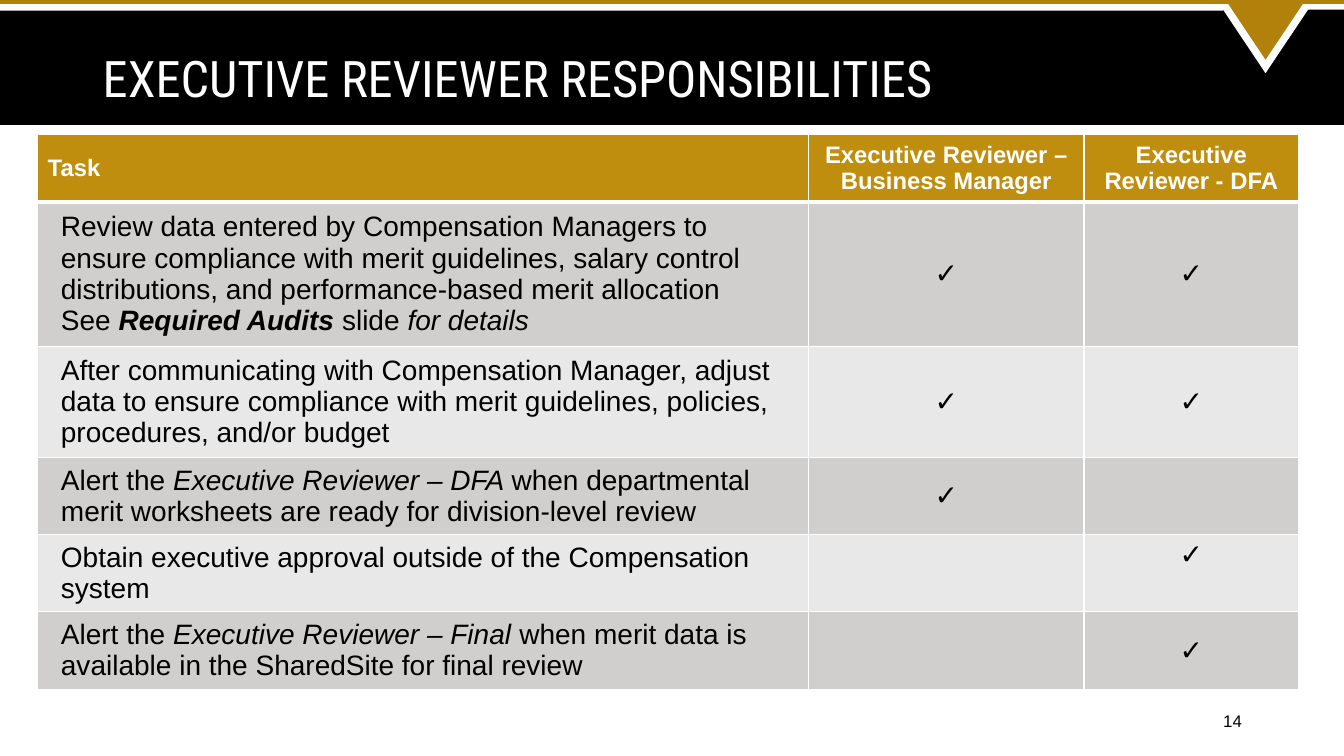
from dataclasses import dataclass

from lxml.etree import SubElement
from pptx import Presentation
from pptx.dml.color import RGBColor
from pptx.enum.shapes import MSO_SHAPE
from pptx.enum.text import MSO_ANCHOR, MSO_AUTO_SIZE, PP_ALIGN
from pptx.oxml.ns import qn
from pptx.util import Pt

COLORS = {
    "black": "000000",
    "white": "FFFFFF",
    "gold": "B1810B",
    "header": "C08E0E",
    "dark_row": "D0CFCE",
    "light_row": "E9E8E8",
}
CHECK = "✓"


@dataclass
class Band:
    shape_type: MSO_SHAPE
    left: float
    top: float
    width: float
    height: float
    color: str
    rotation: float = 0
    outline: float = 0


@dataclass
class Words:
    text: str
    bold: bool = False
    italic: bool = False


@dataclass
class Task:
    paragraphs: list[list[Words]]
    manager: bool
    dfa: bool
    height: float
    check_anchor: MSO_ANCHOR = MSO_ANCHOR.MIDDLE


BANDS = [
    Band(MSO_SHAPE.RECTANGLE, 0, 0, 960, 89.3, "black"),
    Band(MSO_SHAPE.ISOSCELES_TRIANGLE, 871.2, -1.4, 65.5, 49, "gold", 180, 5.25),
    Band(MSO_SHAPE.RECTANGLE, 0, 0, 873.7, 7.6, "white"),
    Band(MSO_SHAPE.RECTANGLE, 931.3, 0, 28.7, 6.9, "white"),
    Band(MSO_SHAPE.RECTANGLE, 0, 0, 960, 2.9, "gold"),
]
HEADINGS = ["Task", "Executive Reviewer – Business Manager", "Executive Reviewer - DFA"]
HEADER_HEIGHT = 48
COLUMN_WIDTHS = [550.8, 196.6, 153.4]
TASKS = [
    Task([[Words("Review data entered by Compensation Managers to ensure compliance with merit "
                 "guidelines, salary control distributions, and performance-based merit allocation")],
          [Words("See "), Words("Required Audits ", bold=True, italic=True),
           Words("slide "), Words("for details", italic=True)]], True, True, 96.4),
    Task([[Words("After communicating with Compensation Manager, adjust data to ensure compliance "
                 "with merit guidelines, policies, procedures, and/or budget")]], True, True, 74.2),
    Task([[Words("Alert the "), Words("Executive Reviewer – DFA ", italic=True),
           Words("when departmental merit worksheets are ready for division-level review")]],
         True, False, 52),
    Task([[Words("Obtain executive approval outside of the Compensation system")]],
         False, True, 52, MSO_ANCHOR.TOP),
    Task([[Words("Alert the "), Words("Executive Reviewer – Final ", italic=True),
           Words("when merit data is available in the SharedSite for final review")]],
         False, True, 52),
]


def rgb(name: str) -> RGBColor:
    return RGBColor.from_string(COLORS[name])


def style(paragraph, size: float, color: str, font: str = "Arial", bold: bool = False) -> None:
    paragraph.font.size = Pt(size)
    paragraph.font.name = font
    paragraph.font.bold = bold
    paragraph.font.color.rgb = rgb(color)


def draw_band(slide, band: Band) -> None:
    shape = slide.shapes.add_shape(band.shape_type, Pt(band.left), Pt(band.top),
                                   Pt(band.width), Pt(band.height))
    shape.shadow.inherit = False
    shape.rotation = band.rotation
    shape.fill.solid()
    shape.fill.fore_color.rgb = rgb(band.color)
    if band.outline:
        shape.line.color.rgb = rgb("white")
        shape.line.width = Pt(band.outline)
        SubElement(shape.line._ln, qn("a:miter"), lim="800000")
    else:
        shape.line.fill.background()


def format_cell(cell, fill: str, bottom: float = 1, anchor: MSO_ANCHOR = MSO_ANCHOR.MIDDLE) -> None:
    cell.vertical_anchor = anchor
    properties = cell._tc.get_or_add_tcPr()
    for side, width in (("lnL", 1), ("lnR", 1), ("lnT", 1), ("lnB", bottom)):
        border = SubElement(properties, qn(f"a:{side}"), w=str(Pt(width)))
        border_fill = SubElement(border, qn("a:solidFill"))
        SubElement(border_fill, qn("a:srgbClr"), val=COLORS["white"])
    cell.fill.solid()
    cell.fill.fore_color.rgb = rgb(fill)


def fill_task(cell, task: Task) -> None:
    frame = cell.text_frame
    for index, words in enumerate(task.paragraphs):
        paragraph = frame.add_paragraph() if index else frame.paragraphs[0]
        paragraph._p.get_or_add_pPr().set("marL", str(Pt(9.4)))
        style(paragraph, 20, "black")
        for part in words:
            run = paragraph.add_run()
            run.text = part.text
            run.font.size = Pt(20)
            run.font.name = "Arial"
            run.font.color.rgb = rgb("black")
            run.font.bold = part.bold
            run.font.italic = part.italic


def fill_plain(cell, text: str, size: float, color: str, bold: bool, centred: bool) -> None:
    paragraph = cell.text_frame.paragraphs[0]
    run = paragraph.add_run()
    run.text = text
    style(paragraph, size, color, bold=bold)
    style(run, size, color, bold=bold)
    if centred:
        paragraph.alignment = PP_ALIGN.CENTER


def draw_table(slide) -> None:
    heights = [HEADER_HEIGHT] + [task.height for task in TASKS]
    table = slide.shapes.add_table(len(heights), len(HEADINGS), Pt(26.9), Pt(96),
                                   Pt(sum(COLUMN_WIDTHS)), Pt(sum(heights))).table
    for column, width in zip(table.columns, COLUMN_WIDTHS):
        column.width = Pt(width)
    for row, height in zip(table.rows, heights):
        row.height = Pt(height)

    for index, heading in enumerate(HEADINGS):
        cell = table.cell(0, index)
        format_cell(cell, "header", bottom=3)
        fill_plain(cell, heading, 17, "white", True, index > 0)

    for index, task in enumerate(TASKS, start=1):
        fill = "dark_row" if index % 2 else "light_row"
        format_cell(table.cell(index, 0), fill)
        fill_task(table.cell(index, 0), task)
        for column, checked in enumerate((task.manager, task.dfa), start=1):
            cell = table.cell(index, column)
            format_cell(cell, fill, anchor=task.check_anchor)
            if checked:
                fill_plain(cell, CHECK, 20, "black", False, True)


def draw_title(slide) -> None:
    title = slide.shapes.title
    title.left, title.top, title.width, title.height = Pt(66.2), Pt(28.8), Pt(820), Pt(59)
    frame = title.text_frame
    frame.text = "EXECUTIVE REVIEWER RESPONSIBILITIES"
    frame.auto_size = MSO_AUTO_SIZE.NONE
    frame.vertical_anchor = MSO_ANCHOR.MIDDLE
    paragraph = frame.paragraphs[0]
    paragraph.alignment = PP_ALIGN.LEFT
    paragraph.line_spacing = 0.9
    style(paragraph, 36, "white", "Roboto Condensed")
    # Bring the title in front of the black band
    slide.shapes._spTree.append(title._element)


def draw_page_number(slide) -> None:
    frame = slide.shapes.add_textbox(Pt(678.2), Pt(500.4), Pt(216), Pt(28.8)).text_frame
    frame.word_wrap = True
    frame.vertical_anchor = MSO_ANCHOR.MIDDLE
    frame.text = "14"
    frame.paragraphs[0].alignment = PP_ALIGN.RIGHT
    style(frame.paragraphs[0], 12, "black")


def main() -> None:
    presentation = Presentation()
    presentation.slide_width, presentation.slide_height = Pt(960), Pt(540)
    slide = presentation.slides.add_slide(presentation.slide_layouts[5])
    for band in BANDS:
        draw_band(slide, band)
    draw_title(slide)
    draw_page_number(slide)
    draw_table(slide)
    presentation.save("out.pptx")


if __name__ == "__main__":
    main()
